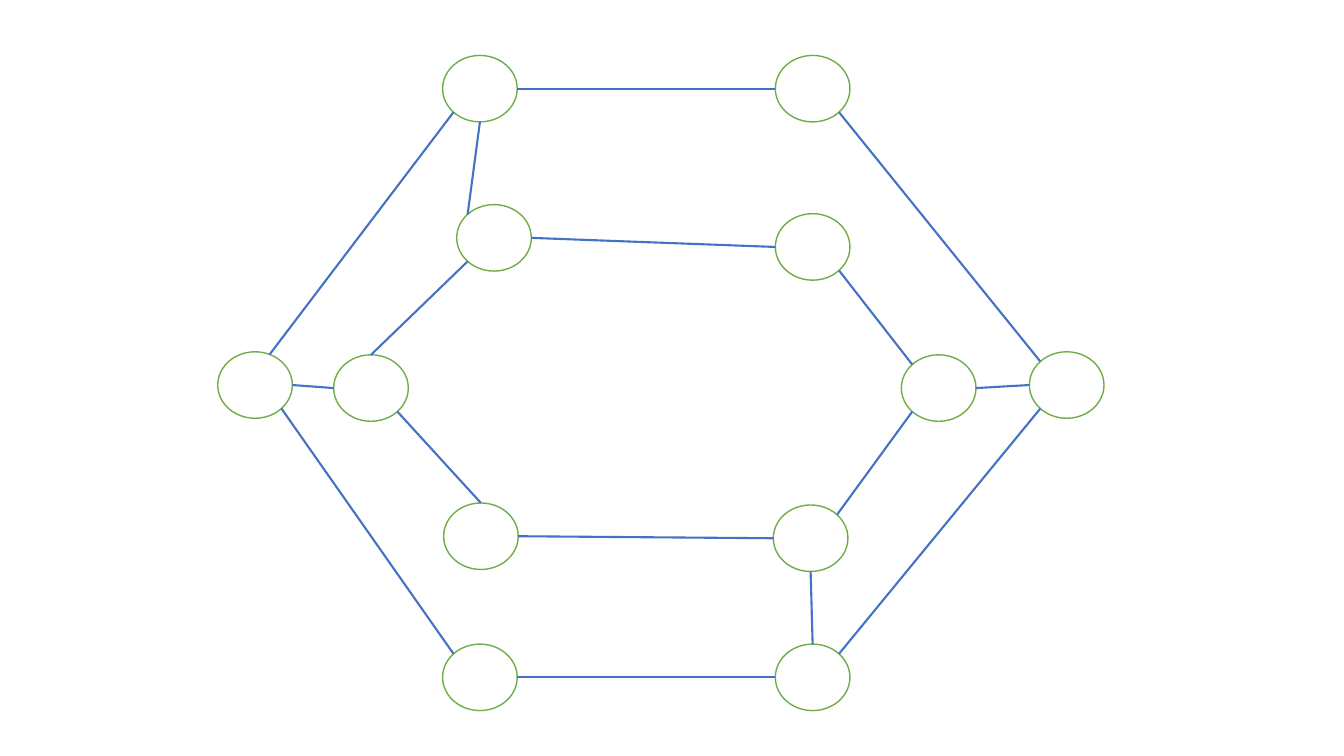
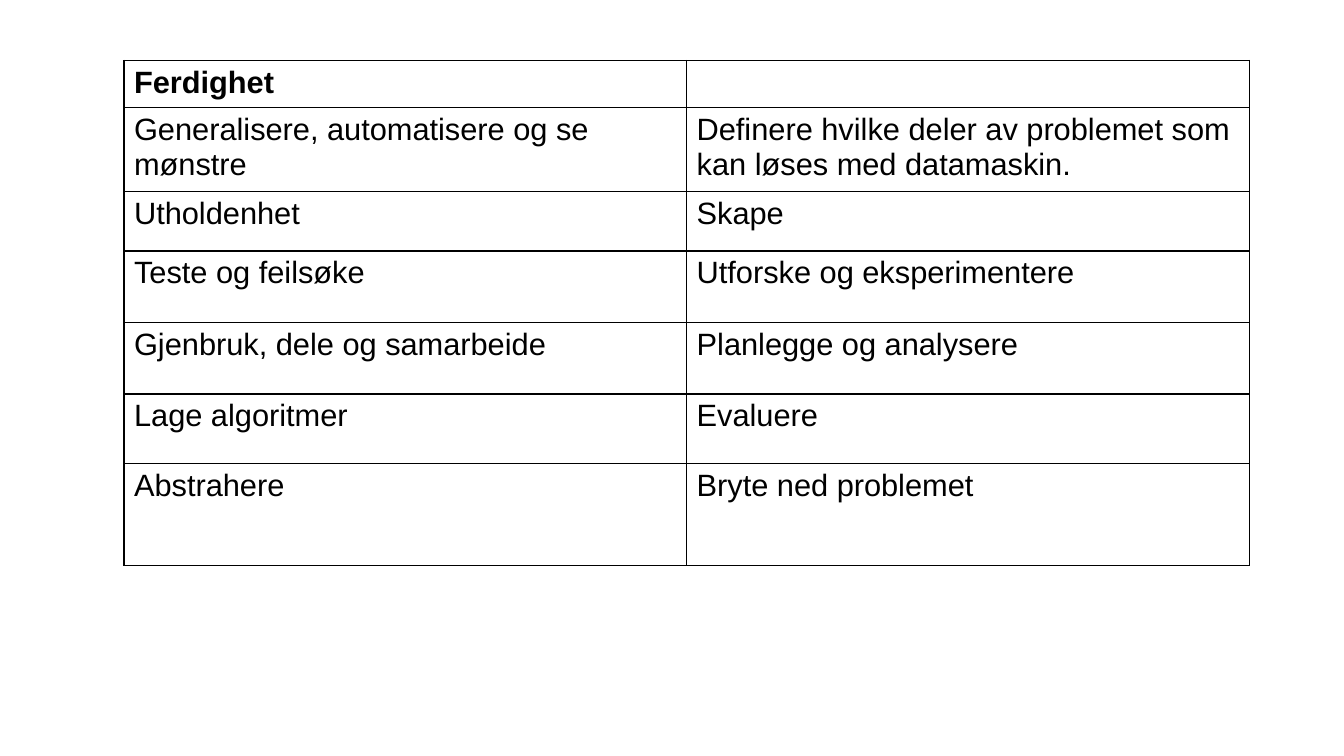
from dataclasses import dataclass
from enum import IntEnum
from math import cos, radians, sin
from typing import Optional

from lxml import etree
from pptx import Presentation
from pptx.dml.color import RGBColor
from pptx.enum import shapes
from pptx.oxml import ns
from pptx.util import Inches, Pt

FONT = "Arial"
BLACK, WHITE, GREEN, BLUE = "000000", "FFFFFF", "70AD47", "4472C4"
NODE_WIDTH, NODE_HEIGHT = 0.74, 0.66


class Site(IntEnum):
    """Connection sites of an ellipse, counter-clockwise from the top."""
    TOP = 0
    TOP_LEFT = 1
    LEFT = 2
    BOTTOM_LEFT = 3
    BOTTOM = 4
    BOTTOM_RIGHT = 5
    RIGHT = 6
    TOP_RIGHT = 7


@dataclass(frozen=True)
class Node:
    left: float
    top: float

    def point(self, angle: float) -> tuple[float, float]:
        """Point on the outline, with the angle in degrees from the right."""
        turn = radians(angle)
        return (self.left + NODE_WIDTH / 2 * (1 + cos(turn)),
                self.top + NODE_HEIGHT / 2 * (1 - sin(turn)))


@dataclass(frozen=True)
class Edge:
    start: str
    start_site: Site
    end: str
    end_site: Optional[Site] = None  # None: a free end at end_angle
    end_angle: float = 0


NODES = {
    # Outer ring
    "outer top left": Node(4.39, 0.55),
    "outer top right": Node(7.69, 0.55),
    "outer right": Node(10.21, 3.49),
    "outer bottom right": Node(7.69, 6.39),
    "outer bottom left": Node(4.39, 6.39),
    "outer left": Node(2.16, 3.49),
    # Inner ring
    "inner left": Node(3.31, 3.52),
    "inner bottom left": Node(4.4, 4.99),
    "inner bottom right": Node(7.67, 5.01),
    "inner right": Node(8.94, 3.52),
    "inner top right": Node(7.69, 2.12),
    "inner top left": Node(4.53, 2.03),
}

EDGES = [
    # Outer ring
    Edge("outer top left", Site.RIGHT, "outer top right", Site.LEFT),
    Edge("outer top right", Site.BOTTOM_RIGHT, "outer right", Site.TOP_LEFT),
    Edge("outer right", Site.BOTTOM_LEFT, "outer bottom right", Site.TOP_RIGHT),
    Edge("outer bottom right", Site.LEFT, "outer bottom left", Site.RIGHT),
    Edge("outer bottom left", Site.TOP_LEFT, "outer left", Site.BOTTOM_RIGHT),
    Edge("outer top left", Site.BOTTOM_LEFT, "outer left", end_angle=67),
    # Spokes between the rings
    Edge("outer top left", Site.BOTTOM, "inner top left", Site.TOP_LEFT),
    Edge("inner left", Site.LEFT, "outer left", Site.RIGHT),
    Edge("outer bottom right", Site.TOP, "inner bottom right", Site.BOTTOM),
    Edge("outer right", Site.LEFT, "inner right", Site.RIGHT),
    # Inner ring
    Edge("inner right", Site.TOP_LEFT, "inner top right", Site.BOTTOM_RIGHT),
    Edge("inner bottom right", Site.TOP_RIGHT, "inner right", Site.BOTTOM_LEFT),
    Edge("inner bottom left", Site.RIGHT, "inner bottom right", Site.LEFT),
    Edge("inner left", Site.BOTTOM_RIGHT, "inner bottom left", Site.TOP),
    Edge("inner left", Site.TOP, "inner top left", Site.BOTTOM_LEFT),
    Edge("inner top right", Site.LEFT, "inner top left", Site.RIGHT),
]

SKILLS = [
    ("Ferdighet", ""),
    ("Generalisere, automatisere og se mønstre",
     "Definere hvilke deler av problemet som kan løses med datamaskin."),
    ("Utholdenhet", "Skape"),
    ("Teste og feilsøke", "Utforske og eksperimentere"),
    ("Gjenbruk, dele og samarbeide", "Planlegge og analysere"),
    ("Lage algoritmer", "Evaluere"),
    ("Abstrahere", "Bryte ned problemet"),
]
ROW_HEIGHTS = [0.47, 0.83, 0.59, 0.71, 0.71, 0.69, 1.01]
COLUMN_WIDTH = 5.58


def color(value: str) -> RGBColor:
    return RGBColor.from_string(value)


def site_angle(site: Site) -> float:
    return 90 + 45 * site


def add_node(page, node: Node):
    circle = page.shapes.add_shape(
        shapes.MSO_SHAPE.OVAL, Inches(node.left), Inches(node.top),
        Inches(NODE_WIDTH), Inches(NODE_HEIGHT))
    circle.shadow.inherit = False
    circle.fill.solid()
    circle.fill.fore_color.rgb = color(WHITE)
    circle.line.color.rgb = color(GREEN)
    circle.line.width = Pt(1)
    return circle


def glue(connector, tag: str, circle, site: Site) -> None:
    """Join one end; begin_connect knows only the four sides of a rectangle."""
    properties = connector._element.nvCxnSpPr.cNvCxnSpPr
    etree.SubElement(properties, ns.qn(tag),
                     id=str(circle.shape_id), idx=str(int(site)))


def add_edge(page, edge: Edge, circles: dict) -> None:
    free = edge.end_site is None
    end_angle = edge.end_angle if free else site_angle(edge.end_site)
    start = NODES[edge.start].point(site_angle(edge.start_site))
    end = NODES[edge.end].point(end_angle)
    connector = page.shapes.add_connector(
        shapes.MSO_CONNECTOR.STRAIGHT, *(Inches(v) for v in start + end))
    connector.line.color.rgb = color(BLUE)
    connector.line.width = Pt(1.5)
    etree.SubElement(connector._element.spPr, ns.qn("a:effectLst"))
    glue(connector, "a:stCxn", circles[edge.start], edge.start_site)
    if not free:
        glue(connector, "a:endCxn", circles[edge.end], edge.end_site)


def write(frame, content: str, *, size: float = 22, bold: bool = False,
          ink: str = BLACK) -> None:
    span = frame.paragraphs[0].add_run()
    span.text = content
    span.font.name = FONT
    span.font.size = Pt(size)
    span.font.bold = bold
    span.font.color.rgb = color(ink)


def add_borders(cell, ink: str, width: float) -> None:
    properties = cell._tc.get_or_add_tcPr()
    for place, side in enumerate(("a:lnL", "a:lnR", "a:lnT", "a:lnB")):
        line = etree.Element(ns.qn(side), w=str(Pt(width)))
        fill = etree.SubElement(line, ns.qn("a:solidFill"))
        etree.SubElement(fill, ns.qn("a:srgbClr"), val=ink)
        properties.insert(place, line)


def build_graph(page) -> None:
    circles = {name: add_node(page, node) for name, node in NODES.items()}
    for edge in EDGES:
        add_edge(page, edge, circles)


def build_skills(page) -> None:
    columns = len(SKILLS[0])
    table = page.shapes.add_table(
        len(SKILLS), columns, Inches(1.23), Inches(0.6),
        Inches(columns * COLUMN_WIDTH), Inches(sum(ROW_HEIGHTS))).table
    table.first_row = table.horz_banding = False
    for column in table.columns:
        column.width = Inches(COLUMN_WIDTH)
    for index, (labels, height) in enumerate(zip(SKILLS, ROW_HEIGHTS)):
        table.rows[index].height = Inches(height)
        for cell, label in zip(table.rows[index].cells, labels):
            cell.fill.solid()
            cell.fill.fore_color.rgb = color(WHITE)
            add_borders(cell, BLACK, 1)
            if label:
                write(cell.text_frame, label, bold=index == 0)


def main() -> None:
    deck = Presentation()
    deck.slide_width, deck.slide_height = Inches(13.33), Inches(7.5)
    blank = deck.slide_layouts[6]
    for build in (build_graph, build_skills):
        build(deck.slides.add_slide(blank))
    deck.save("out.pptx")


if __name__ == "__main__":
    main()
